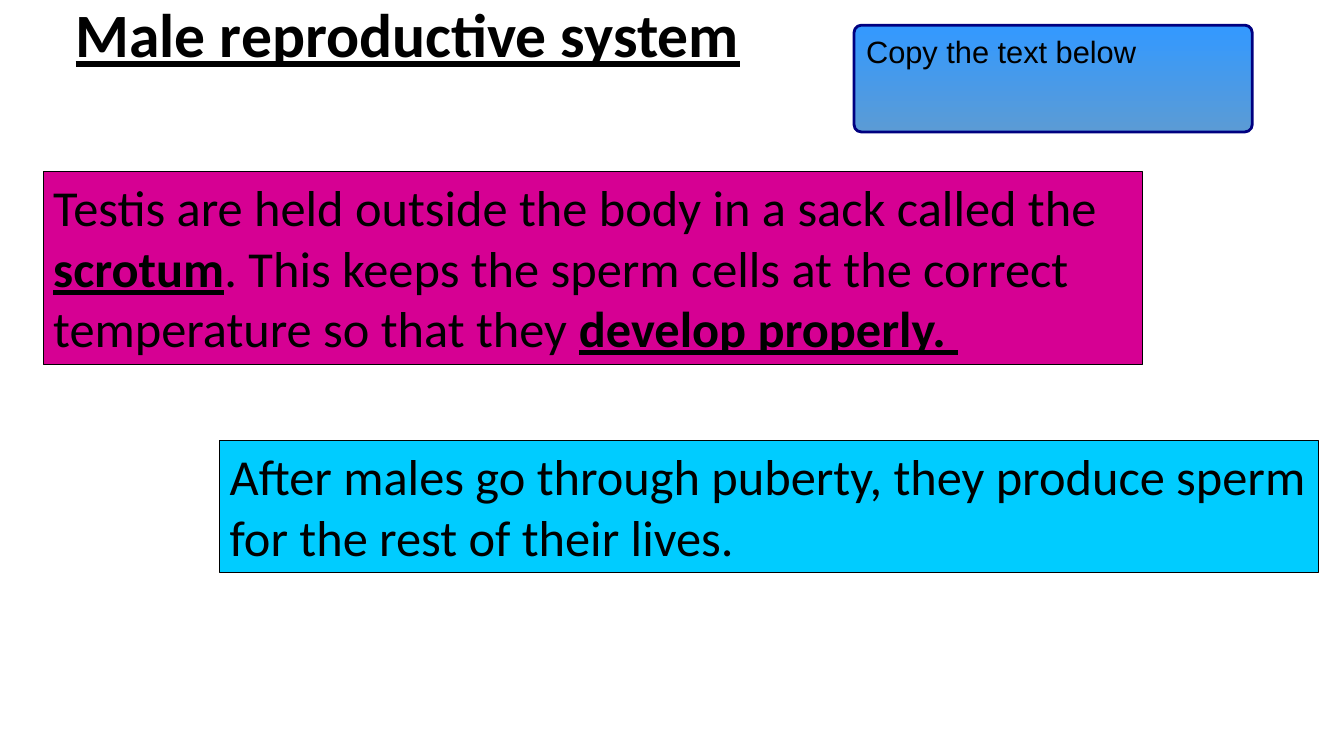
from dataclasses import dataclass

from pptx import Presentation
from pptx import util as u
from pptx.dml.color import RGBColor
from pptx.enum import shapes, text

PX = u.Inches(1) // 100


@dataclass(frozen=True)
class Theme:
    """Colours, fonts and type sizes of the slide."""
    ink: str = "000000"
    pink: str = "D60093"
    cyan: str = "00CCFF"
    navy: str = "000080"
    blues: tuple = ("3399FF", "5B9BD5")
    body_font: str = "Calibri"
    label_font: str = "Arial"
    title_size: int = 44
    body_size: int = 36
    label_size: int = 22


THEME = Theme()


def place(sp, left, top, width, height):
    """Set the position and size of a shape in px."""
    sp.left, sp.top, sp.width, sp.height = (
        n * PX for n in (left, top, width, height))


def add_run(p, words, font=THEME.body_font, size=THEME.body_size, strong=False):
    """Add a run, bold and underlined when strong."""
    r = p.add_run()
    r.text = words
    r.font.name, r.font.size = font, u.Pt(size)
    r.font.bold = r.font.underline = strong
    r.font.color.rgb = RGBColor.from_string(THEME.ink)


def add_title(slide, words, box):
    """Place and fill the title placeholder."""
    sp = slide.shapes.title
    place(sp, *box)
    tf = sp.text_frame
    tf.word_wrap = True
    tf.vertical_anchor = text.MSO_ANCHOR.MIDDLE
    p = tf.paragraphs[0]
    p.alignment = text.PP_ALIGN.LEFT
    p.line_spacing = 0.9
    add_run(p, words, size=THEME.title_size, strong=True)


def add_box(slide, kind, box, line, weight):
    """Add an outlined shape with left-aligned text at the top."""
    sp = slide.shapes.add_shape(kind, 0, 0, PX, PX)
    place(sp, *box)
    sp.shadow.inherit = False
    sp.line.color.rgb = RGBColor.from_string(line)
    sp.line.width = u.Pt(weight)
    tf = sp.text_frame
    tf.word_wrap = True
    tf.vertical_anchor = text.MSO_ANCHOR.TOP
    tf.paragraphs[0].alignment = text.PP_ALIGN.LEFT
    return sp


def add_instruction(slide, words, box):
    """Add the rounded instruction label with a vertical gradient."""
    sp = add_box(slide, shapes.MSO_SHAPE.ROUNDED_RECTANGLE, box, THEME.navy, 2)
    sp.adjustments[0] = 0.07
    sp.fill.gradient()
    sp.fill.gradient_angle = 270
    for stop, colour in zip(sp.fill.gradient_stops, THEME.blues):
        stop.color.rgb = RGBColor.from_string(colour)
    add_run(sp.text_frame.paragraphs[0], words,
            font=THEME.label_font, size=THEME.label_size)


def add_fact(slide, runs, box, fill):
    """Add a filled box of body text from (words, strong) pairs."""
    sp = add_box(slide, shapes.MSO_SHAPE.RECTANGLE, box, THEME.ink, 0.75)
    sp.fill.solid()
    sp.fill.fore_color.rgb = RGBColor.from_string(fill)
    sp.text_frame.auto_size = text.MSO_AUTO_SIZE.SHAPE_TO_FIT_TEXT
    for words, strong in runs:
        add_run(sp.text_frame.paragraphs[0], words, strong=strong)


def main():
    """Build and save the slide."""
    prs = Presentation()
    prs.slide_width, prs.slide_height = u.Inches(13.33), u.Inches(7.5)
    slide = prs.slides.add_slide(prs.slide_layouts.get_by_name("Title Only"))
    add_title(slide, "Male reproductive system", (65, -35, 1150, 145))
    add_instruction(slide, "Copy the text below", (847, 25, 395, 106))
    add_fact(slide, [
        ("Testis are held outside the body in a sack called the ", False),
        ("scrotum", True),
        (". This keeps the sperm cells at the correct temperature "
         "so that they ", False),
        ("develop properly. ", True),
    ], (43, 170, 1090, 192), THEME.pink)
    add_fact(slide, [
        ("After males go through puberty, they produce sperm "
         "for the rest of their lives.", False),
    ], (218, 437, 1090, 131), THEME.cyan)
    prs.save("out.pptx")


if __name__ == "__main__":
    main()
